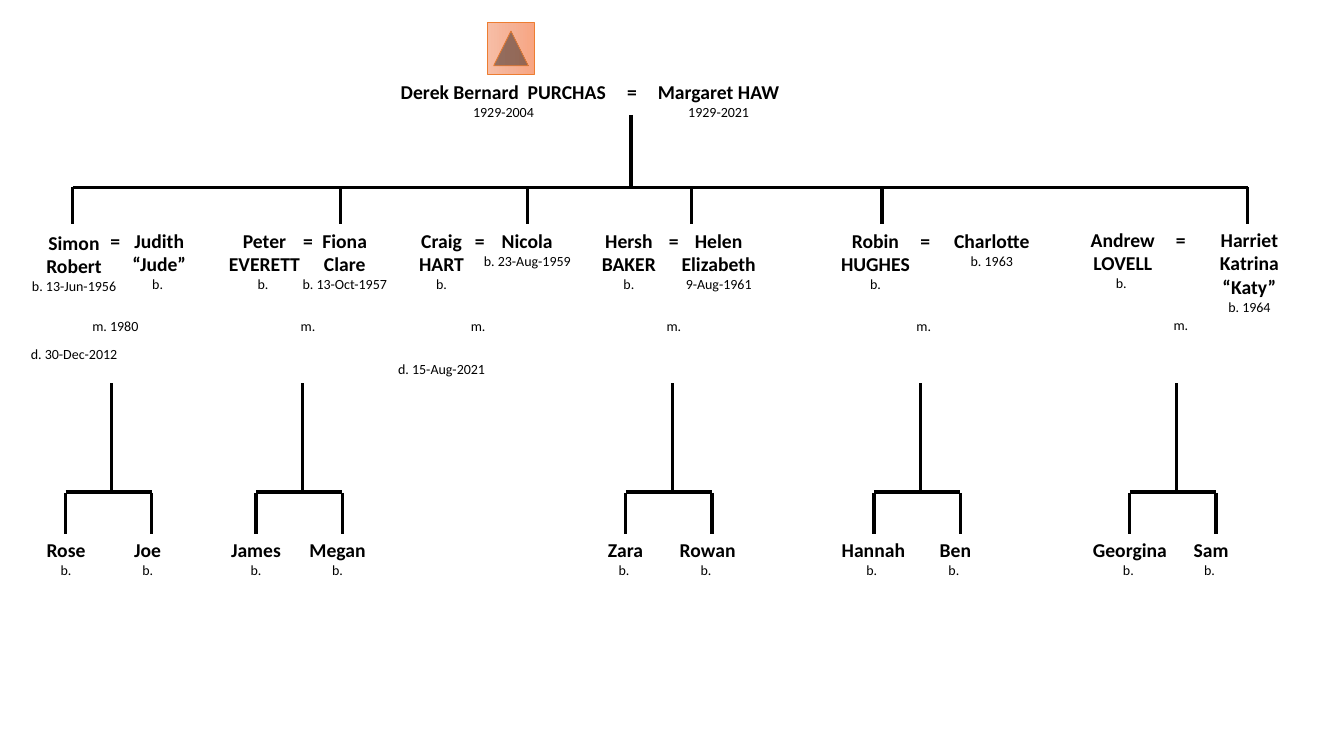
import copy

import pptx
import pptx.dml.color
import pptx.enum.shapes
import pptx.enum.text
import pptx.oxml.ns
import pptx.util
from lxml import etree

Pt = pptx.util.Pt
RGB = pptx.dml.color.RGBColor
BLACK = RGB(0x00, 0x00, 0x00)
ORANGE = RGB(0xED, 0x7D, 0x31)
PEACH = [(0, RGB(0xF7, 0xBD, 0xA5)), (0.5, RGB(0xF5, 0xB1, 0x96)), (1, RGB(0xF8, 0xA5, 0x82))]

deck = pptx.Presentation()
deck.slide_width, deck.slide_height = Pt(960), Pt(540)
slide = deck.slides.add_slide(deck.slide_layouts[6])


def line(x1, y1, x2, y2):
    rule = slide.shapes.add_connector(
        pptx.enum.shapes.MSO_CONNECTOR.STRAIGHT, Pt(x1), Pt(y1), Pt(x2), Pt(y2))
    rule.line.color.rgb = BLACK
    rule.line.width = Pt(2.25)
    etree.SubElement(rule._element.spPr, pptx.oxml.ns.qn("a:effectLst"))


def label(left, top, width, height, names, notes, gap=0):
    """Centred bold names over small notes; gap is the space above the last note."""
    box = slide.shapes.add_textbox(Pt(left), Pt(top), Pt(width), Pt(height))
    frame = box.text_frame
    frame.word_wrap = False
    frame.auto_size = pptx.enum.text.MSO_AUTO_SIZE.SHAPE_TO_FIT_TEXT
    rows = [(name, 14) for name in names] + [(note, 10) for note in notes]
    for i, (text, size) in enumerate(rows):
        para = frame.add_paragraph() if i else frame.paragraphs[0]
        para.alignment = pptx.enum.text.PP_ALIGN.CENTER
        run = para.add_run()
        run.text = text
        run.font.name = "Calibri"
        run.font.size = Pt(size)
        run.font.bold = size == 14
        run.font.color.rgb = BLACK
    if gap:
        para.space_before = Pt(gap)


# Parents
label(278.6, 53.3, 162, 36, ["Derek Bernard  PURCHAS"], ["1929-2004"])
label(440.6, 53.3, 21.6, 41, ["="], [])
label(462.2, 53.3, 102.2, 36, ["Margaret HAW"], ["1929-2021"])

button = slide.shapes.add_shape(
    pptx.enum.shapes.MSO_SHAPE.ACTION_BUTTON_FORWARD_OR_NEXT,
    Pt(346.3), Pt(18), Pt(37.4), Pt(33.1))
button.rotation = 270
button.shadow.inherit = False
button.line.color.rgb = ORANGE
button.line.width = Pt(0.5)
button.fill.gradient()
button.fill.gradient_angle = 270
stops = button._element.spPr.find(".//" + pptx.oxml.ns.qn("a:gsLst"))
stops.insert(1, copy.deepcopy(stops[0]))
for stop, (place, color) in zip(button.fill.gradient_stops, PEACH):
    stop.position = place
    stop.color.rgb = color

# Branches to the second generation
BAR, TOP = 133.9, 159.8
drops = [51.8, 243.4, 376.6, 493.9, 630, 891.4]
line(450.7, 82.1, 450.7, BAR)
line(drops[0], BAR, drops[-1], BAR)
for x in drops:
    line(x, BAR, x, TOP)

# Second generation: left, top, width, height, names, notes, gap
people = [
    (14.4, 161.3, 77, 101.5, ["Simon", "Robert"], ["b. 13-Jun-1956", "d. 30-Dec-2012"], 36.6),
    (87.1, TOP, 53.3, 90, ["Judith", "“Jude”"], ["b. "]),
    (156.2, TOP, 65.5, 53.3, ["Peter", "EVERETT"], ["b. "]),
    (208.1, TOP, 76.3, 77.8, ["Fiona", "Clare"], ["b. 13-Oct-1957"]),
    (276.5, TOP, 77.8, 113.8, ["Craig", "HART"], ["b.", "d. 15-Aug-2021"], 48.8),
    (337.7, TOP, 77.8, 60.5, ["Nicola"], ["b. 23-Aug-1959"]),
    (422.6, TOP, 53.3, 65.5, ["Hersh", "BAKER"], ["b."]),
    (479.5, TOP, 67.7, 53.3, ["Helen", "Elizabeth"], ["9-Aug-1961"]),
    (593.3, TOP, 64.1, 116.6, ["Robin", "HUGHES"], ["b."]),
    (673.9, TOP, 69.1, 48.2, ["Charlotte"], ["b. 1963"]),
    (771.8, 159.1, 60.5, 53.3, ["Andrew", "LOVELL"], ["b. "]),
    (864, 159.1, 56.9, 94.3, ["Harriet", "Katrina", "“Katy”"], ["b. 1964"]),
]
for person in people:
    label(*person)

# Marriages: left, top, width, note
unions = [
    (58.3, TOP, 48.2, "m. 1980"), (207.4, TOP, 25.2, "m."), (329, TOP, 27.4, "m. "),
    (468.7, TOP, 25.2, "m."), (647.3, TOP, 27.4, "m. "), (830.9, 159.1, 25.2, "m."),
]
for left, top, width, note in unions:
    label(left, top, width, 82.1, ["="], [note], 46.4)

# Forks to the third generation
FORK, KIDS = 351.4, 380.9
for stem in [79.9, 216, 480.2, 657.4, 840.2]:
    first, last = stem - 33.1, stem + 28.4
    line(stem, 273.6, stem, FORK)
    line(first, FORK, last, FORK)
    for x in (first, last):
        line(x, 352.1, x, 381.6)

# Third generation: left, width, height, name, note
kids = [
    (25.9, 42.5, 48.2, "Rose", "b."), (88.6, 33.8, 48.2, "Joe", "b."),
    (157.7, 50.4, 48.2, "James", "b."), (213.8, 54.7, 36, "Megan", "b."),
    (427, 39.6, 48.2, "Zara", "b. "), (478.1, 54.7, 48.2, "Rowan", "b. "),
    (594, 59.8, 48.2, "Hannah", "b. "), (663.8, 37.4, 36, "Ben", "b. "),
    (773.3, 67.7, 48.2, "Georgina", "b. "), (845.3, 39.6, 36, "Sam", "b. "),
]
for left, width, height, name, note in kids:
    label(left, KIDS, width, height, [name], [note])

deck.save("out.pptx")
